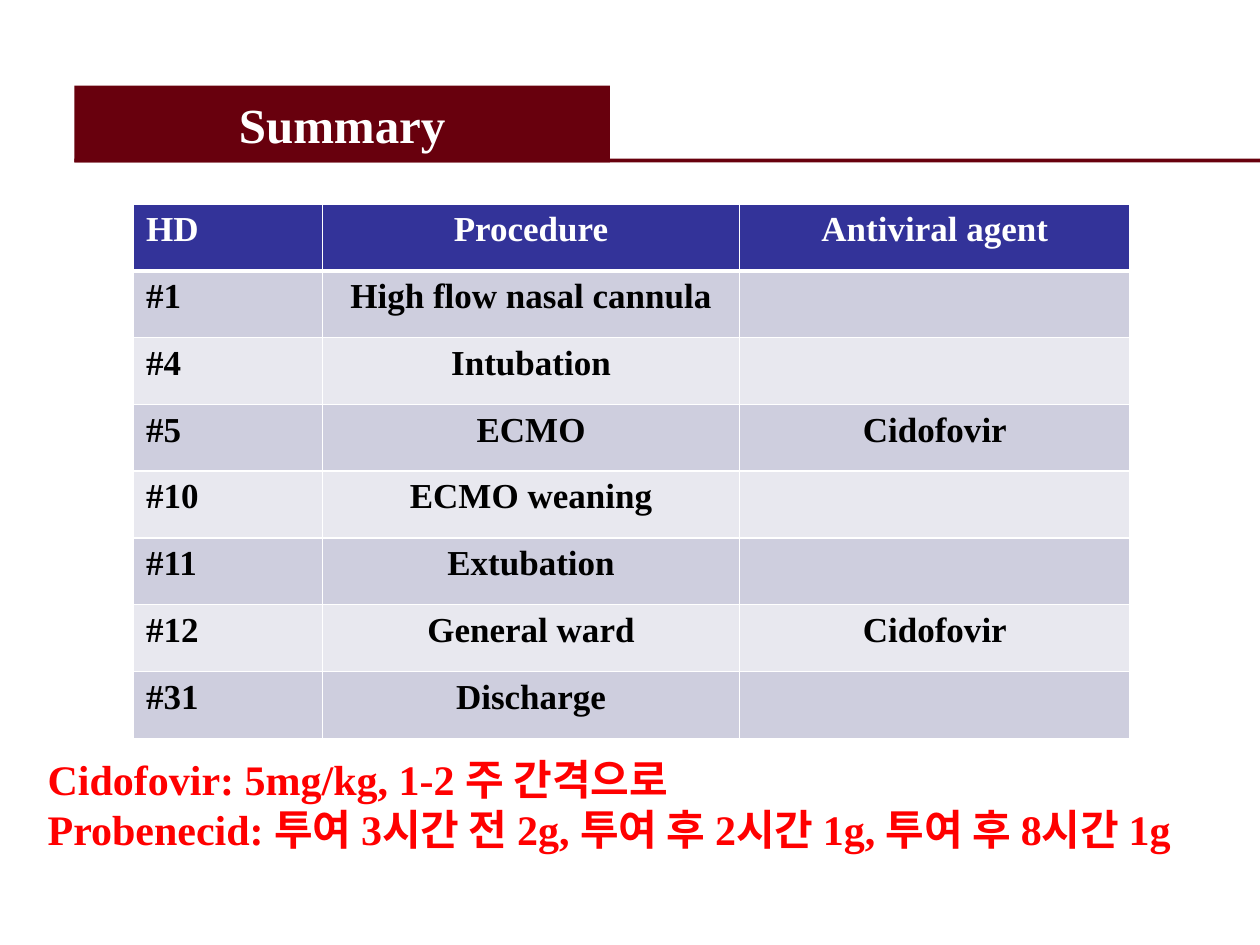
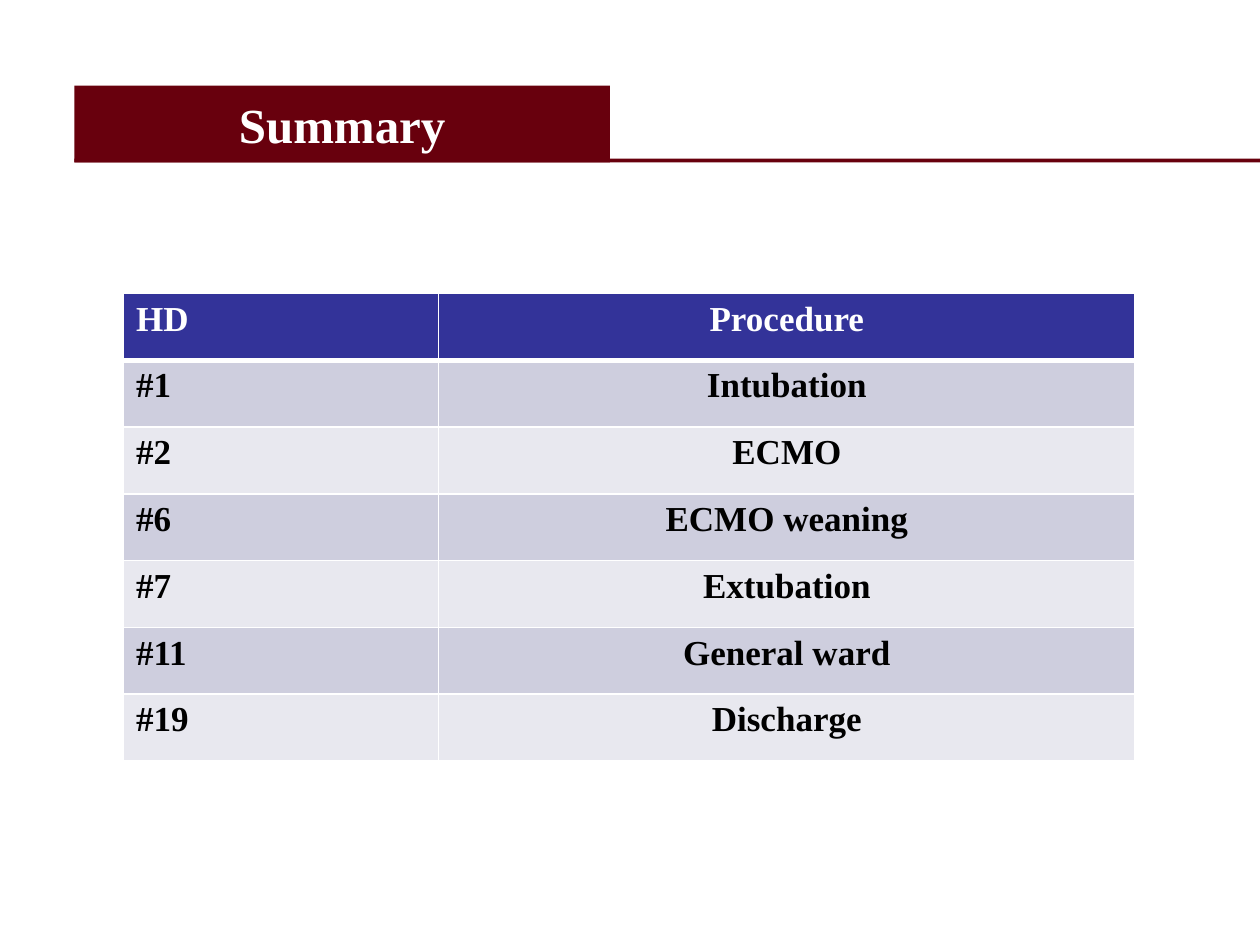
from lxml.etree import SubElement
from pptx import Presentation
from pptx.dml.color import RGBColor
from pptx.enum.shapes import MSO_SHAPE as Shape
from pptx.enum.text import MSO_ANCHOR as Anchor, PP_ALIGN as Align
from pptx.oxml.ns import qn
from pptx.util import Inches, Pt

COLORS = {
    "band": "68000D",
    "header": "333399",
    "odd_row": "CECEDE",
    "even_row": "E8E8EF",
    "white": "FFFFFF",
    "black": "000000",
    "note": "FF0000",
}
FONT = "Times New Roman"
COLUMNS, ROWS = 10, 7.5
UNIT = Inches(1)
BAND_LEFT, BAND_BOTTOM = 0.59, 1.29
BAND_WIDTH, BAND_HEIGHT = 4.25, 0.61
RULE_HEIGHT = 0.03
TABLE_ROW = 0.53
THIN, THICK = 1, 3

PROCEDURES_WITH_AGENT = [
    ("HD", "Procedure", "Antiviral agent"),
    ("#1", "High flow nasal cannula", ""),
    ("#4", "Intubation", ""),
    ("#5", "ECMO", "Cidofovir"),
    ("#10", "ECMO weaning", ""),
    ("#11", "Extubation", ""),
    ("#12", "General ward", "Cidofovir"),
    ("#31", "Discharge", ""),
]
PROCEDURES = [
    ("HD", "Procedure"),
    ("#1", "Intubation"),
    ("#2", "ECMO"),
    ("#6", "ECMO weaning"),
    ("#7", "Extubation"),
    ("#11", "General ward"),
    ("#19", "Discharge"),
]
DOSING = [
    "Cidofovir: 5mg/kg, 1-2 주 간격으로",
    "Probenecid: 투여 3시간 전 2g, 투여 후 2시간 1g, 투여 후 8시간 1g",
]


def grid(*cells):
    return [round(cell * UNIT) for cell in cells]


def color(name):
    return RGBColor.from_string(COLORS[name])


def paint(fill, name):
    fill.solid()
    fill.fore_color.rgb = color(name)


def write(frame, lines, size, color_name, align=Align.LEFT):
    font_format = {"name": FONT, "size": Pt(size), "bold": True}
    for index, line in enumerate(lines):
        paragraph = frame.add_paragraph() if index else frame.paragraphs[0]
        paragraph.alignment = align
        run = paragraph.add_run()
        run.text = line
        for key, value in font_format.items():
            setattr(run.font, key, value)
        run.font.color.rgb = color(color_name)


def add_band(slide, left, top, width, height):
    band = slide.shapes.add_shape(Shape.RECTANGLE, *grid(left, top, width, height))
    band.shadow.inherit = False
    paint(band.fill, "band")
    band.line.fill.background()
    return band


def add_title(slide, text):
    add_band(slide, BAND_LEFT, BAND_BOTTOM - RULE_HEIGHT, COLUMNS - BAND_LEFT, RULE_HEIGHT)
    title = add_band(slide, BAND_LEFT, BAND_BOTTOM - BAND_HEIGHT, BAND_WIDTH, BAND_HEIGHT)
    title.text_frame.vertical_anchor = Anchor.MIDDLE
    write(title.text_frame, [text], 28, "white", Align.CENTER)


def add_borders(cell, top, bottom):
    properties = cell._tc.get_or_add_tcPr()
    for side, width in {"L": THIN, "R": THIN, "T": top, "B": bottom}.items():
        line = SubElement(properties, qn(f"a:ln{side}"), w=str(Pt(width)))
        fill = SubElement(line, qn("a:solidFill"))
        SubElement(fill, qn("a:srgbClr"), val=COLORS["white"])


def add_procedure_table(slide, left, top, widths, records):
    size = grid(left, top, sum(widths), TABLE_ROW * len(records))
    table = slide.shapes.add_table(len(records), len(widths), *size).table
    for column, width in zip(table.columns, grid(*widths)):
        column.width = width
    for row, record in enumerate(records):
        stripe = "odd_row" if row % 2 else "even_row"
        for column, text in enumerate(record):
            cell = table.cell(row, column)
            add_borders(cell, THICK if row == 1 else THIN, THIN if row else THICK)
            paint(cell.fill, stripe if row else "header")
            if text:
                align = Align.CENTER if column else Align.LEFT
                write(cell.text_frame, [text], 20, "black" if row else "white", align)


def add_note(slide, left, top, width, height, lines):
    note = slide.shapes.add_textbox(*grid(left, top, width, height))
    note.text_frame.word_wrap = True
    write(note.text_frame, lines, 24, "note")


def add_summary_slide(presentation):
    slide = presentation.slides.add_slide(presentation.slide_layouts[6])
    add_title(slide, "Summary")
    return slide


def main():
    presentation = Presentation()
    presentation.slide_width, presentation.slide_height = grid(COLUMNS, ROWS)

    slide = add_summary_slide(presentation)
    add_procedure_table(slide, 1.06, 1.62, [1.5, 3.31, 3.1], PROCEDURES_WITH_AGENT)
    add_note(slide, 0.28, 5.93, 9.53, 0.91, DOSING)

    slide = add_summary_slide(presentation)
    add_procedure_table(slide, 0.98, 2.33, [2.5, 5.53], PROCEDURES)

    presentation.save("out.pptx")


if __name__ == "__main__":
    main()
